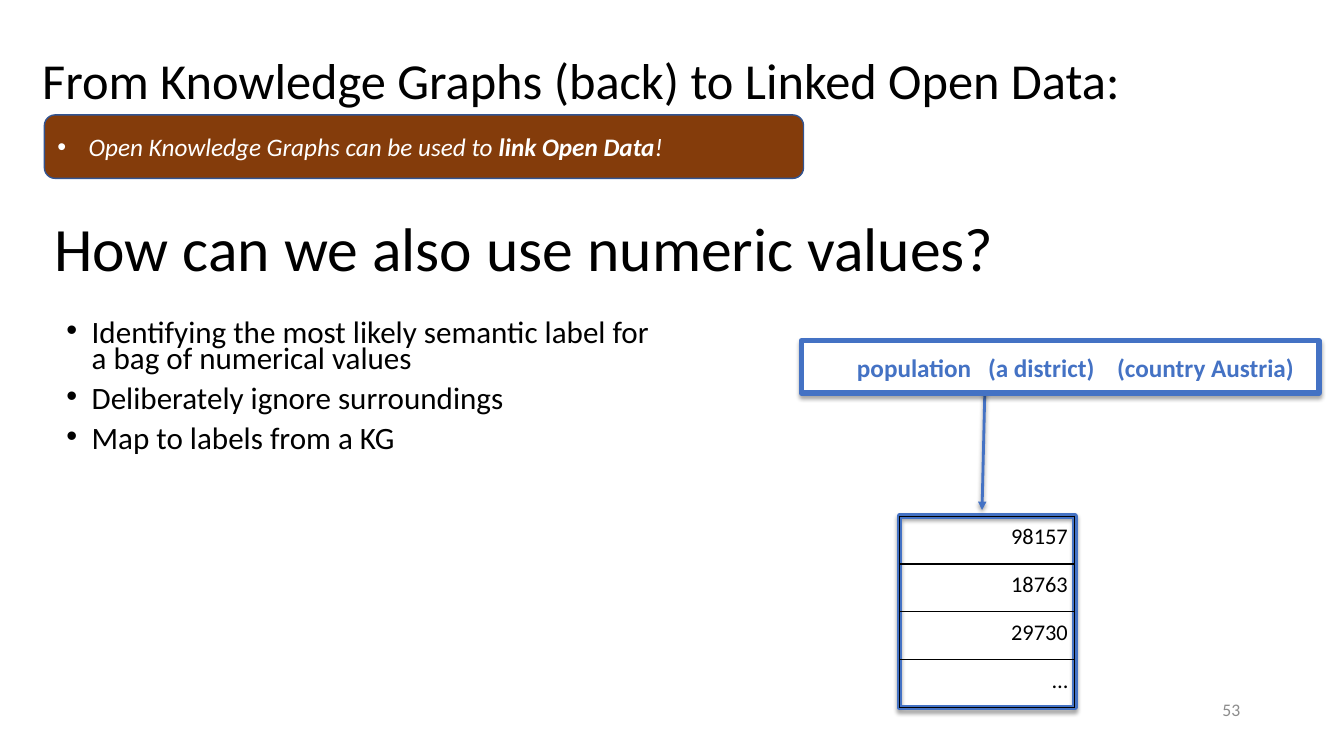
from typing import NamedTuple

from lxml import etree
from pptx import Presentation
from pptx.dml.color import RGBColor
from pptx.enum.shapes import MSO_CONNECTOR, MSO_SHAPE
from pptx.enum.text import MSO_ANCHOR, PP_ALIGN
from pptx.oxml.ns import qn
from pptx.util import Inches, Pt

RECTANGLE = MSO_SHAPE.RECTANGLE
CALLOUT = MSO_SHAPE.ROUNDED_RECTANGULAR_CALLOUT
STRAIGHT = MSO_CONNECTOR.STRAIGHT
TOP, MIDDLE = MSO_ANCHOR.TOP, MSO_ANCHOR.MIDDLE
LEFT, RIGHT = PP_ALIGN.LEFT, PP_ALIGN.RIGHT

BLACK = RGBColor(0x00, 0x00, 0x00)
WHITE = RGBColor(0xFF, 0xFF, 0xFF)
BLUE = RGBColor(0x44, 0x72, 0xC4)
DARK_BLUE = RGBColor(0x32, 0x54, 0x91)
BROWN = RGBColor(0x84, 0x3C, 0x0B)
GREY = RGBColor(0x8C, 0x8C, 0x8C)
FONT = "Calibri"


class Area(NamedTuple):
    left: float
    top: float
    width: float
    height: float

    def lengths(self):
        return [Inches(value) for value in self]


class TextBox(NamedTuple):
    area: Area
    lines: list[str]
    size: float
    color: RGBColor = BLACK
    align: PP_ALIGN = LEFT
    anchor: MSO_ANCHOR = MIDDLE
    spacing: float = 0.9
    space_before: float = 0
    side_inset: float = 0.1
    bullet_indent: float = 0


VALUES = ["98157", "18763", "29730", "…"]
VALUES_AREA = Area(8.92, 5.12, 1.74, 1.9)
ROW_HEIGHT = VALUES_AREA.height / len(VALUES)
LABEL_AREA = Area(7.95, 3.38, 5.13, 0.52)
LABEL_TABS = (1.3, 2.58)
CALLOUT_AREA = Area(0.44, 1.14, 7.53, 0.63)

TEXT_BOXES = [
    TextBox(Area(11.58, 6.87, 0.82, 0.34), ["53"], 12.6, GREY, RIGHT, spacing=1),
    TextBox(
        Area(0.66, 3.15, 5.94, 1.41),
        [
            "Identifying the most likely semantic label for a bag of numerical values",
            "Deliberately ignore surroundings",
            "Map to labels from a KG",
        ],
        22.2, anchor=TOP, spacing=0.7, space_before=10, side_inset=0, bullet_indent=0.25,
    ),
    TextBox(Area(0.32, 0.1, 11.5, 1.45),
            ["From Knowledge Graphs (back) to Linked Open Data:"], 36),
    TextBox(Area(0.44, 1.77, 11.5, 1.45), ["How can we also use numeric values?"], 44),
]


def style_span(span, size: float, color: RGBColor, bold=False, italic=False) -> None:
    span.font.name = FONT
    span.font.size = Pt(size)
    span.font.color.rgb = color
    span.font.bold = bold
    span.font.italic = italic


def add_bullet(para, indent: float) -> None:
    properties = para._p.get_or_add_pPr()
    properties.set("marL", str(Inches(indent)))
    properties.set("indent", str(-Inches(indent)))
    bullet_font = etree.SubElement(properties, qn("a:buFont"))
    bullet_font.set("typeface", "Arial")
    etree.SubElement(properties, qn("a:buChar")).set("char", "•")


def set_shadow(shape, opacity: int, distance: float) -> None:
    """Give the shape a soft black shadow straight below it."""
    effects = etree.SubElement(shape._element.spPr, qn("a:effectLst"))
    shadow = etree.SubElement(effects, qn("a:outerShdw"), blurRad=str(Pt(3)),
                              dist=str(Pt(distance)), dir="5400000", rotWithShape="0")
    color = etree.SubElement(shadow, qn("a:srgbClr"), val=str(BLACK))
    etree.SubElement(color, qn("a:alpha"), val=str(opacity * 1000))


def add_box(page, preset: MSO_SHAPE, area: Area, line: RGBColor, weight: float,
            fill: RGBColor | None = None):
    box = page.shapes.add_shape(preset, *area.lengths())
    box.shadow.inherit = False
    box.line.color.rgb = line
    box.line.width = Pt(weight)
    if fill is None:
        box.fill.background()
    else:
        box.fill.solid()
        box.fill.fore_color.rgb = fill
    box.text_frame.word_wrap = True
    box.text_frame.vertical_anchor = MIDDLE
    return box


def add_raised_box(page, area: Area, fill: RGBColor | None = None):
    box = add_box(page, RECTANGLE, area, BLUE, 4, fill)
    effects = box._element.spPr.find(qn("a:effectLst"))
    box._element.spPr.remove(effects)
    set_shadow(box, 35, 1.8)
    return box


def add_arrow(page) -> None:
    arrow = page.shapes.add_connector(
        STRAIGHT, Inches(9.77), Inches(3.8), Inches(9.74), Inches(5.06))
    arrow.line.color.rgb = BLUE
    arrow.line.width = Pt(2)
    for end in ("a:headEnd", "a:tailEnd"):
        etree.SubElement(arrow.line._get_or_add_ln(), qn(end), type="triangle")
    set_shadow(arrow, 38, 1.6)


def add_label(page) -> None:
    frame = add_raised_box(page, LABEL_AREA, WHITE).text_frame
    frame.margin_left = Inches(0.55)
    frame.margin_right = frame.margin_top = frame.margin_bottom = Inches(0.05)
    para = frame.paragraphs[0]
    para.text = "population\t(a district)\t(country Austria)"
    para.alignment = LEFT
    stops = etree.SubElement(para._p.get_or_add_pPr(), qn("a:tabLst"))
    for position in LABEL_TABS:
        etree.SubElement(stops, qn("a:tab"), pos=str(Inches(position)), algn="l")
    for span in para.runs:
        style_span(span, 18, BLUE, bold=True)


def add_text_box(page, text: TextBox) -> None:
    frame = page.shapes.add_textbox(*text.area.lengths()).text_frame
    frame.word_wrap = True
    frame.vertical_anchor = text.anchor
    frame.margin_left = frame.margin_right = Inches(text.side_inset)
    frame.text = "\n".join(text.lines)
    for index, para in enumerate(frame.paragraphs):
        para.alignment = text.align
        para.line_spacing = text.spacing
        if index:
            para.space_before = Pt(text.space_before)
        if text.bullet_indent:
            add_bullet(para, text.bullet_indent)
        style_span(para.runs[0], text.size, text.color)


def add_cell_borders(cell) -> None:
    properties = cell._tc.get_or_add_tcPr()
    for position, side in enumerate(("a:lnL", "a:lnR", "a:lnT", "a:lnB")):
        border = etree.Element(qn(side), w=str(Pt(1)))
        fill = etree.SubElement(border, qn("a:solidFill"))
        etree.SubElement(fill, qn("a:srgbClr"), val=str(BLACK))
        properties.insert(position, border)


def add_values_table(page) -> None:
    table = page.shapes.add_table(len(VALUES), 1, *VALUES_AREA.lengths()).table
    table.first_row = table.horz_banding = False
    for row, value in zip(table.rows, VALUES):
        row.height = Inches(ROW_HEIGHT)
        cell = row.cells[0]
        cell.fill.background()
        cell.margin_left = cell.margin_right = Inches(0.07)
        cell.margin_top = cell.margin_bottom = Inches(0.07)
        add_cell_borders(cell)
        para = cell.text_frame.paragraphs[0]
        para.text = value
        para.alignment = RIGHT
        style_span(para.runs[0], 16, BLACK)


def add_callout(page) -> None:
    callout = add_box(page, CALLOUT, CALLOUT_AREA, DARK_BLUE, 1, BROWN)
    for index, adjustment in enumerate((-0.16, 0.5, 0.17)):
        callout.adjustments[index] = adjustment
    para = callout.text_frame.paragraphs[0]
    para.alignment = LEFT
    add_bullet(para, 0.31)
    for words, bold in (("Open Knowledge Graphs can be used to ", False),
                        ("link Open Data", True), ("!", False)):
        span = para.add_run()
        span.text = words
        style_span(span, 18, WHITE, bold, italic=True)


def main() -> None:
    deck = Presentation()
    deck.slide_width, deck.slide_height = Inches(13.33), Inches(7.5)
    page = deck.slides.add_slide(deck.slide_layouts[6])
    add_raised_box(page, VALUES_AREA)
    add_arrow(page)
    add_label(page)
    add_values_table(page)
    add_callout(page)
    for text in TEXT_BOXES:
        add_text_box(page, text)
    deck.save("out.pptx")


if __name__ == "__main__":
    main()
